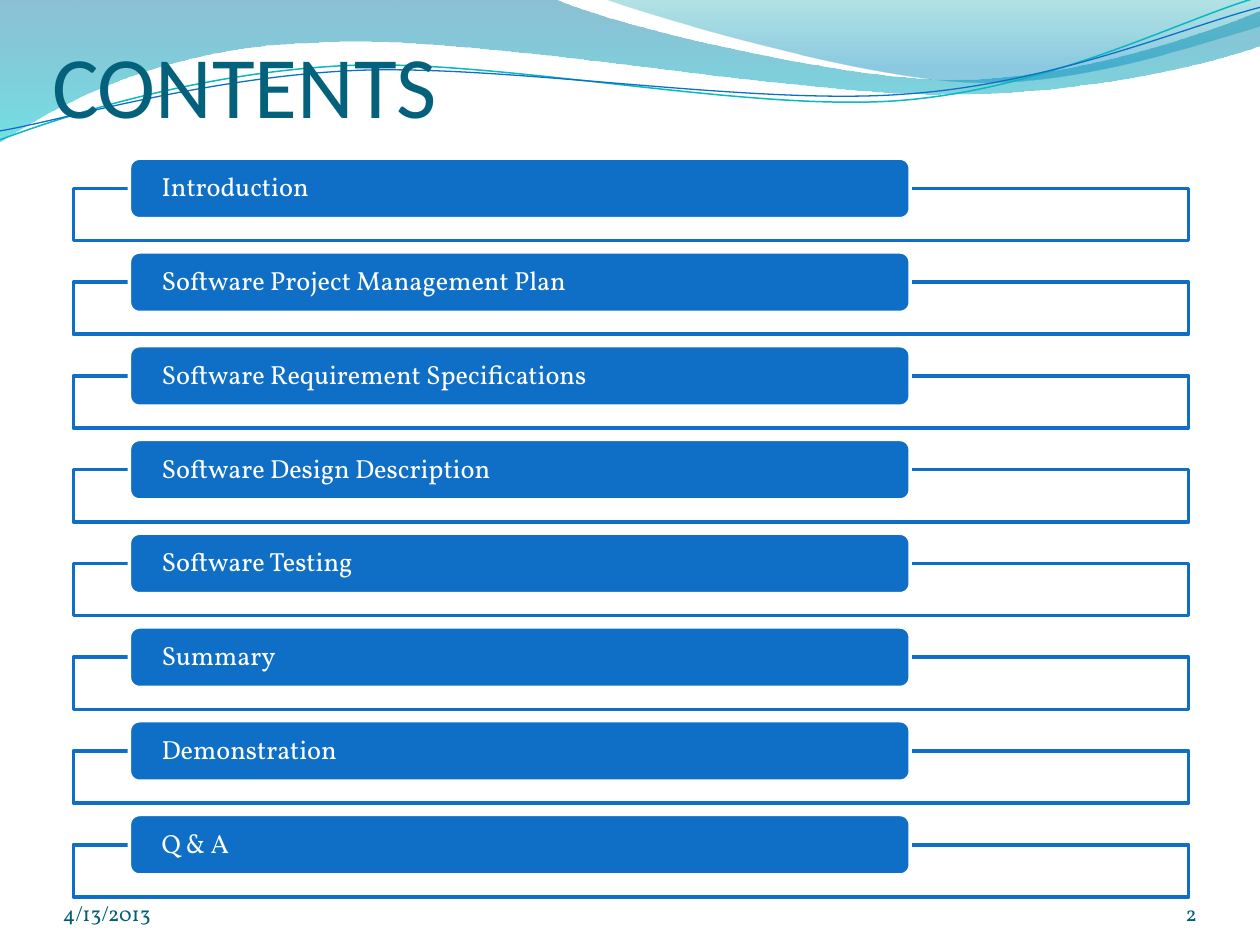
"""Build the CONTENTS slide: wave header, eight agenda bars, date and page number."""
from lxml.etree import SubElement
from pptx import Presentation
from pptx.dml.color import RGBColor
from pptx.enum.shapes import MSO_SHAPE
from pptx.enum.text import MSO_ANCHOR, MSO_AUTO_SIZE, PP_ALIGN
from pptx.oxml.ns import qn
from pptx.util import Cm, Pt

COLORS = {
    "blue": "0F6FC6", "teal": "0AB8BF", "white": "FFFFFF", "title": "04617B", "footer": "045D75",
    "wave_blue": "0074A1", "wave_cyan": "00C6CF", "crest_teal": "00A1A9", "crest_blue": "008BBF",
}
RGB = {name: RGBColor.from_string(value) for name, value in COLORS.items()}


def add_curve(shapes, start, segments, closed):
    builder = shapes.build_freeform(Cm(start[0]), Cm(start[1]))
    builder.add_line_segments([(Cm(seg[-2]), Cm(seg[-1])) for seg in segments], close=closed)
    s = builder.convert_to_shape()
    s.shadow.inherit = False
    for node, seg in zip(list(s._element.spPr.iter(qn("a:lnTo"))), segments):
        if len(seg) == 6:
            curve = SubElement(node.getparent(), qn("a:cubicBezTo"))
            for x, y in zip(seg[::2], seg[1::2]):
                SubElement(curve, qn("a:pt"), x=str(Cm(x) - s.left), y=str(Cm(y) - s.top))
            node.getparent().replace(node, curve)
    return s


def write(tf, text, font, size, color, anchor, align=PP_ALIGN.LEFT, side=0, top=0):
    tf.word_wrap = True
    tf.auto_size = MSO_AUTO_SIZE.NONE
    tf.vertical_anchor = anchor
    tf.margin_left = tf.margin_right = Cm(side)
    tf.margin_top, tf.margin_bottom = Cm(top), 0
    p = tf.paragraphs[0]
    p.alignment = align
    r = p.add_run()
    r.text = text
    r.font.name, r.font.size = font, Pt(size)
    r.font.color.rgb = RGB[color]
    return p


prs = Presentation()
prs.slide_width, prs.slide_height = Cm(25.4), Cm(19.05)
slide = prs.slides.add_slide(prs.slide_layouts[5])
shapes = slide.shapes

waves = [
    ((0, -0.02), [(11.18, -0.02), (12.09, 0.43, 16.87, 1.6, 19.25, 1.6),
                  (21.67, 1.6, 24.33, 0.66, 25.4, 0.23), (25.43, 0.91),
                  (24.97, 1.12, 22.1, 1.93, 18.95, 1.9), (15.8, 1.9, 9.7, 0.71, 6.53, 0.86),
                  (3.28, 0.91, 1.17, 2.11, -0.02, 2.87)],
     [("wave_blue", 0, 45), ("wave_cyan", 1, 55)]),
    ((12.17, -0.02), [(12.93, 0.28, 17.32, 1.57, 19.53, 1.65),
                      (21.74, 1.75, 24.41, 0.81, 25.4, 0.53), (25.4, 0)],
     [("crest_teal", 0, 30), ("crest_blue", 0.8, 45)]),
]
for start, segments, stops in waves:
    s = add_curve(shapes, start, segments, True)
    s.line.fill.background()
    s.fill.gradient()
    s.fill.gradient_angle = 270
    for stop, (color, position, _) in zip(s.fill.gradient_stops, stops):
        stop.color.rgb = RGB[color]
        stop.position = position
    for clr, (_, _, opacity) in zip(s._element.spPr.iter(qn("a:srgbClr")), stops):
        SubElement(clr, qn("a:alpha"), val=str(opacity * 1000))

strands = [
    ("teal", 0.85, (0, 2.82), [(1.22, 2.36, 4.01, 1.45, 7.04, 1.32),
                               (10.03, 1.19, 15.06, 2.26, 18.11, 2.03),
                               (21.16, 1.8, 23.83, 0.38, 25.35, -0.05)]),
    ("blue", 0.75, (0, 2.64), [(1.19, 2.44, 4.17, 1.55, 7.19, 1.42),
                               (10.24, 1.3, 15.16, 2.13, 18.21, 1.9),
                               (21.23, 1.7, 23.9, 0.53, 25.4, 0.15)]),
]
for color, width, start, segments in strands:
    s = add_curve(shapes, start, segments, False)
    s.fill.background()
    s.line.color.rgb = RGB[color]
    s.line.width = Pt(width)

title = shapes.title
title.left, title.top, title.width, title.height = Cm(1.05), Cm(0.41), Cm(22.86), Cm(2.34)
write(title.text_frame, "CONTENTS", "Calibri", 50, "title", MSO_ANCHOR.BOTTOM, top=0.13)
shapes._spTree.append(title._element)

topics = ["Introduction", "Software Project Management Plan",
          "Software Requirement Specifications", "Software Design Description",
          "Software Testing", "Summary", "Demonstration", "Q & A"]
for i, topic in enumerate(topics):
    top = 3.19 + 1.89 * i
    frame = shapes.add_shape(MSO_SHAPE.RECTANGLE, Cm(1.48), Cm(top + 0.61), Cm(22.48), Cm(1.05))
    bar = shapes.add_shape(MSO_SHAPE.ROUNDED_RECTANGLE, Cm(2.61), Cm(top), Cm(15.74), Cm(1.22))
    for s, fill, line in ((frame, "white", "blue"), (bar, "blue", "white")):
        s.shadow.inherit = False
        s.fill.solid()
        s.fill.fore_color.rgb = RGB[fill]
        s.line.color.rgb = RGB[line]
        s.line.width = Pt(2)
    SubElement(next(frame._element.spPr.iter(qn("a:srgbClr"))), qn("a:alpha"), val="90000")
    p = write(bar.text_frame, topic, "Vollkorn", 15, "white", MSO_ANCHOR.MIDDLE, side=0.59)
    p.line_spacing = 0.9

footers = [("4/13/2013", 1.27, 5.93, PP_ALIGN.LEFT), ("2", 22.02, 2.11, PP_ALIGN.RIGHT)]
for text, left, width, align in footers:
    s = shapes.add_textbox(Cm(left), Cm(17.65), Cm(width), Cm(1.01))
    write(s.text_frame, text, "Vollkorn", 12, "footer", MSO_ANCHOR.BOTTOM, align)

prs.save("out.pptx")
